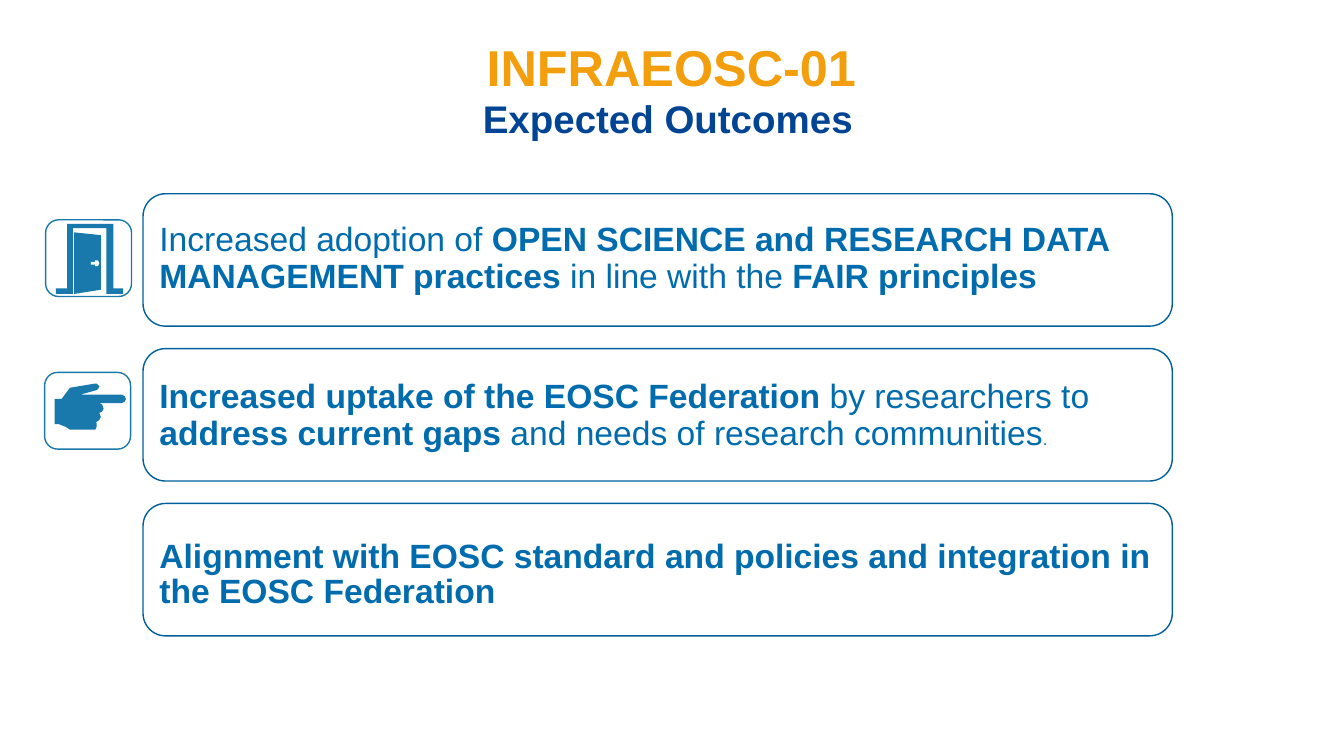
from pptx import Presentation
from pptx.dml.color import RGBColor
from pptx.enum.shapes import MSO_SHAPE as SHAPE
from pptx.enum.text import MSO_ANCHOR as ANCHOR, PP_ALIGN as ALIGN
from pptx.util import Pt

ICON_BLUE = "1A79AC"


def color(hex_code):
    return RGBColor.from_string(hex_code)


def style_shape(shape, fill=None, line=None):
    shape.shadow.inherit = False
    if fill:
        shape.fill.solid()
        shape.fill.fore_color.rgb = color(fill)
    else:
        shape.fill.background()
    if line:
        shape.line.color.rgb = color(line)
        shape.line.width = Pt(1)
    else:
        shape.line.fill.background()


deck = Presentation()
deck.slide_width, deck.slide_height = Pt(960), Pt(540)
page = deck.slides.add_slide(deck.slide_layouts[6])

# Title: text, size, colour, line spacing, left indent
title_lines = [
    ("INFRAEOSC-01", 36, "F39E0C", 42, 3.6),
    ("Expected Outcomes", 27.5, "004493", 31.8, 0.9),
]
title = page.shapes.add_textbox(Pt(344), Pt(25.2), Pt(280), Pt(75.6))
frame = title.text_frame
frame.word_wrap = True
frame.margin_left = frame.margin_right = frame.margin_bottom = 0
frame.margin_top = Pt(1.5)
frame.text = "\n".join(line[0] for line in title_lines)
for para, (_, size, ink, spacing, indent) in zip(frame.paragraphs, title_lines):
    para.line_spacing = Pt(spacing)
    para._p.get_or_add_pPr().set("marL", str(Pt(indent)))
    font = para.runs[0].font
    font.name, font.size, font.bold = "Arial", Pt(size), True
    font.color.rgb = color(ink)

# Outcome cards: top and bottom inset, line spacing, spans (text, bold, size)
outcomes = [
    (0, 3, 26.8, [
        ("Increased adoption of ", False, 24),
        ("OPEN SCIENCE and RESEARCH DATA MANAGEMENT practices ", True, 24),
        ("in line with the ", False, 24),
        ("FAIR principles", True, 24),
    ]),
    (0, 0, 26.8, [
        ("Increased uptake of the EOSC Federation ", True, 24),
        ("by researchers to ", False, 24),
        ("address current gaps ", True, 24),
        ("and needs of research communities", False, 24),
        (".", False, 12),
    ]),
    (8.5, 0, 24.8, [
        ("Alignment with EOSC standard and policies and integration in "
         "the EOSC Federation", True, 24),
    ]),
]
for row, (top_inset, bottom_inset, spacing, spans) in enumerate(outcomes):
    card = page.shapes.add_shape(SHAPE.ROUNDED_RECTANGLE, Pt(102.2),
                                 Pt(138.4 + row * 110.6), Pt(735.2), Pt(94.6))
    card.adjustments[0] = 0.17
    style_shape(card, line="00609E")
    frame = card.text_frame
    frame.word_wrap = True
    frame.vertical_anchor = ANCHOR.MIDDLE
    # The rounded corners already inset the text by about 4.7 pt
    frame.margin_left, frame.margin_right = Pt(7), Pt(3)
    frame.margin_top, frame.margin_bottom = Pt(top_inset), Pt(bottom_inset)
    para = frame.paragraphs[0]
    para.alignment = ALIGN.LEFT
    para.line_spacing = Pt(spacing)
    for text, bold, size in spans:
        span = para.add_run()
        span.text = text
        span.font.name, span.font.size, span.font.bold = "Arial", Pt(size), bold
        span.font.color.rgb = color("006CAE")

# Icon frames
for left, top in [(32.6, 157), (31.9, 266)]:
    badge = page.shapes.add_shape(SHAPE.ROUNDED_RECTANGLE, Pt(left), Pt(top),
                                  Pt(61.4), Pt(54.8))
    badge.adjustments[0] = 0.17
    style_shape(badge, line=ICON_BLUE)

# Icons: open door with its knob, pointing hand
door_frame = [(40.3, 205.9), (47.5, 205.9), (47.5, 159.8), (80.6, 159.8),
              (80.6, 205.9), (87.8, 205.9), (87.8, 210.2), (76.3, 210.2),
              (76.3, 163.4), (51.8, 163.4), (51.8, 210.2), (40.3, 210.2)]
door_panel = [(72, 167.8), (53.3, 165.6), (53.3, 210.2), (72, 207.4)]
door_knob = [(64.8, 187.2), (67.7, 187.2), (68.4, 186.5), (69.8, 186.5),
             (70.6, 188.2), (69.8, 190.1), (68.4, 190.1), (67.7, 188.6),
             (64.8, 188.6)]
hand = [(67.7, 273.6), (50.4, 277.2), (43.9, 285.1), (38.9, 285.1),
        (38.9, 303.1), (42.5, 303.1), (46.8, 305.3), (50.4, 306.7),
        (54.7, 307.4), (65.5, 307.4), (68.4, 306.7), (69.1, 305.3),
        (69.1, 302.4), (68.4, 301.7), (71.3, 300.5), (72, 298.1),
        (71.3, 295.2), (73.4, 294.2), (74.2, 291.6), (73.4, 289.4),
        (70.6, 288), (87.1, 288), (89.3, 287.3), (90, 285.1),
        (89.3, 283), (87.1, 282.2), (56.9, 282.2), (68.4, 279.4),
        (70.2, 277.9), (70.6, 275.8), (69.1, 274.3)]
for outline, fill in [(door_frame, ICON_BLUE), (door_panel, ICON_BLUE),
                      (door_knob, "FFFFFF"), (hand, ICON_BLUE)]:
    builder = page.shapes.build_freeform(*outline[0], scale=Pt(1))
    builder.add_line_segments(outline[1:], close=True)
    style_shape(builder.convert_to_shape(), fill=fill)

deck.save("out.pptx")
